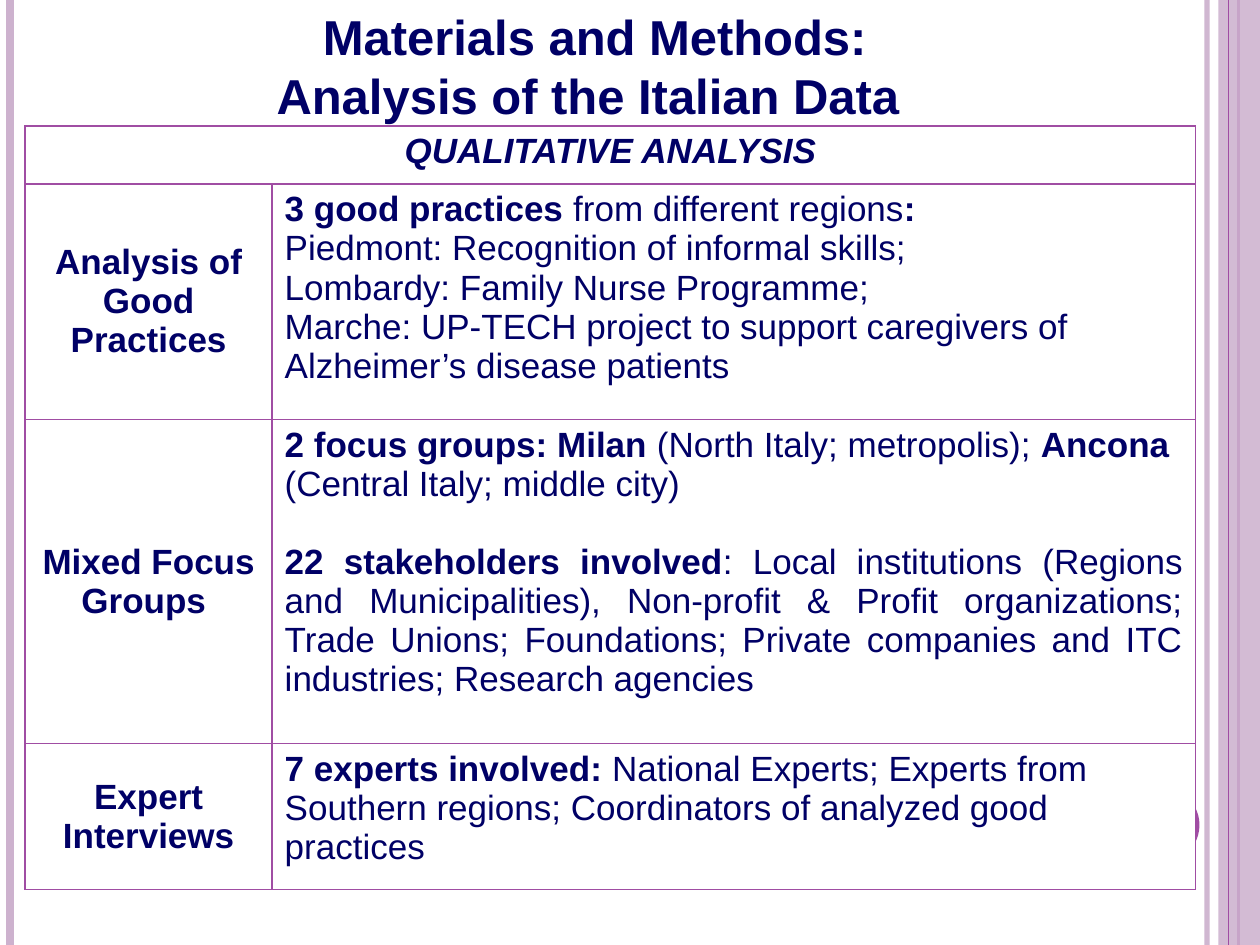
from lxml import etree
from pptx import Presentation
from pptx.dml.color import RGBColor
from pptx.enum.shapes import MSO_CONNECTOR, MSO_SHAPE
from pptx.enum.text import MSO_ANCHOR, MSO_AUTO_SIZE, PP_ALIGN
from pptx.oxml.ns import qn
from pptx.util import Inches, Pt

LEFT, CENTER, JUSTIFY = PP_ALIGN.LEFT, PP_ALIGN.CENTER, PP_ALIGN.JUSTIFY
TOP, MIDDLE = MSO_ANCHOR.TOP, MSO_ANCHOR.MIDDLE
STRAIGHT = MSO_CONNECTOR.STRAIGHT
RECT, OVAL = MSO_SHAPE.RECTANGLE, MSO_SHAPE.OVAL
NO_FIT = MSO_AUTO_SIZE.NONE

THEME = {
    "font": "Arial", "title": Pt(28), "body": Pt(20), "gap": Pt(22.3),
    "text": "000066", "purple": "A04DA3", "lilac": "CDB2CE", "white": "FFFFFF",
}


def rgb(name):
    return RGBColor.from_string(THEME[name])


def add_runs(p, runs, size, align):
    """Fill a paragraph with (text, style) runs; style holds b and i."""
    p.alignment = align
    for text, style in runs:
        r = p.add_run()
        r.text = text
        r.font.name = THEME["font"]
        r.font.size = THEME[size]
        r.font.color.rgb = rgb("text")
        r.font.bold = "b" in style
        r.font.italic = "i" in style


prs = Presentation()
prs.slide_width, prs.slide_height = Inches(10), Inches(7.5)
W, H = prs.slide_width, prs.slide_height
s = prs.slides.add_slide(prs.slide_layouts[5])
s.background.fill.solid()
s.background.fill.fore_color.rgb = rgb("white")

# Side decoration, back to front: kind, x, y, width, height, colour, opacity
# (a rule runs the full height and its width is in points)
for kind, x, y, w, h, color, alpha in [
    (STRAIGHT, 0.958, 0, 3, 1, "lilac", 93),
    (STRAIGHT, 0.008, 0, 4.5, 1, "lilac", 100),
    (STRAIGHT, 0.983, 0, 1.5, 1, "purple", 100),
    (RECT, 0.967, 0, 0.033, 1, "lilac", 87),
    (STRAIGHT, 0.975, 0, 0.75, 1, "purple", 100),
    (OVAL, 0.892, 0.833, 0.06, 0.08, "purple", 100),
]:
    if kind is STRAIGHT:
        sp = s.shapes.add_connector(kind, int(W * x), 0, int(W * x), H)
        sp.line.color.rgb = rgb(color)
        sp.line.width = Pt(w)
        etree.SubElement(sp._element.spPr, qn("a:effectLst"))
    else:
        sp = s.shapes.add_shape(kind, int(W * x), int(H * y), int(W * w), int(H * h))
        sp.shadow.inherit = False
        sp.fill.solid()
        sp.fill.fore_color.rgb = rgb(color)
        sp.line.fill.background()
    if alpha < 100:
        clr = sp._element.spPr.find(".//" + qn("a:srgbClr"))
        etree.SubElement(clr, qn("a:alpha"), val=str(alpha * 1000))

# Title
title = s.shapes.title
title.left, title.top = int(W * 0.106), 0
title.width, title.height = int(W * 0.732), int(H * 0.137)
tf = title.text_frame
tf.word_wrap, tf.auto_size, tf.vertical_anchor = True, NO_FIT, TOP
for n, line in enumerate(["Materials and Methods:", "Analysis of the Italian Data "]):
    p = tf.add_paragraph() if n else tf.paragraphs[0]
    p.line_spacing = 1.0
    p.space_before = p.space_after = Pt(0)
    add_runs(p, [(line, "b")], "title", CENTER)

# Table content: each cell is a list of (alignment, runs)
ROWS = [
    [[(CENTER, [("QUALITATIVE ANALYSIS", "bi")])], []],
    [[(CENTER, [("Analysis of Good Practices", "b")])],
     [(LEFT, [("3 good practices ", "b"), ("from different regions", ""), (":", "b")]),
      (LEFT, [("Piedmont: Recognition of informal skills;", "")]),
      (LEFT, [("Lombardy: Family Nurse Programme;", "")]),
      (LEFT, [("Marche: UP-TECH project to support caregivers of "
               "Alzheimer’s disease patients", "")])]],
    [[(CENTER, [("Mixed Focus Groups ", "b")])],
     [(LEFT, [("2 focus groups: Milan ", "b"), ("(North Italy; metropolis); ", ""),
              ("Ancona", "b"), (" (Central Italy; middle city)", "")]),
      (JUSTIFY, [("22 stakeholders involved", "b"),
                 (": Local institutions (Regions and Municipalities), Non-profit & "
                  "Profit organizations; Trade Unions; Foundations; Private "
                  "companies and ITC industries; Research agencies", "")])]],
    [[(CENTER, [("Expert Interviews", "b")])],
     [(LEFT, [("7 experts involved: ", "b"),
              ("National Experts; Experts from Southern regions; Coordinators "
               "of analyzed good practices", "")])]],
]
COLS, HEIGHTS = [1.96, 7.33], [0.46, 1.87, 2.57, 1.16]

# Table grid
table = s.shapes.add_table(len(ROWS), len(COLS), int(W * 0.02), Inches(1),
                           Inches(sum(COLS)), Inches(sum(HEIGHTS))).table
for col, width in zip(table.columns, COLS):
    col.width = Inches(width)
for row, height in zip(table.rows, HEIGHTS):
    row.height = Inches(height)
table.cell(0, 0).merge(table.cell(0, 1))

# Table cells
for i, row in enumerate(ROWS):
    for j, paragraphs in enumerate(row):
        cell = table.cell(i, j)
        cell.vertical_anchor = MIDDLE if i and j == 0 else TOP
        tcPr = cell._tc.get_or_add_tcPr()
        for side in ("a:lnL", "a:lnR", "a:lnT", "a:lnB"):
            ln = etree.SubElement(tcPr, qn(side), w=str(Pt(1)))
            fill = etree.SubElement(ln, qn("a:solidFill"))
            etree.SubElement(fill, qn("a:srgbClr"), val=THEME["purple"])
        cell.fill.solid()
        cell.fill.fore_color.rgb = rgb("white")
        tf = cell.text_frame
        for n, (align, runs) in enumerate(paragraphs):
            p = tf.add_paragraph() if n else tf.paragraphs[0]
            if align == JUSTIFY:
                p.space_before = THEME["gap"]
            add_runs(p, runs, "body", align)

prs.save("out.pptx")
